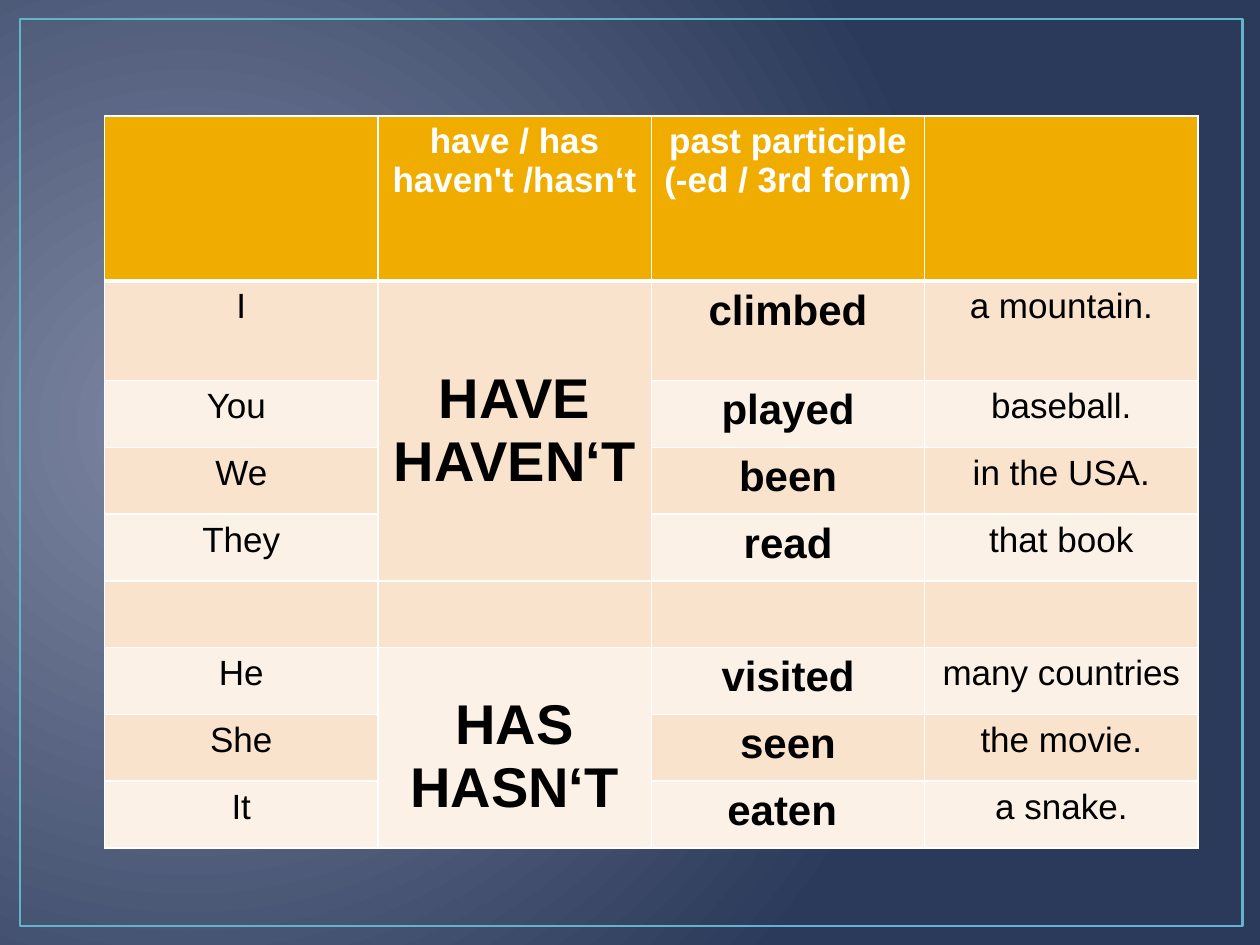
import pptx
import pptx.dml.color
import pptx.enum.shapes
import pptx.enum.text
import pptx.oxml
import pptx.oxml.ns
import pptx.util
from pptx.dml.color import RGBColor
from pptx.util import Inches

WHITE = RGBColor(0xFF, 0xFF, 0xFF)
BLACK = RGBColor(0x00, 0x00, 0x00)
GOLD = RGBColor(0xF0, 0xAD, 0x00)
PEACH = RGBColor(0xF9, 0xE3, 0xCC)
CREAM = RGBColor(0xFC, 0xF1, 0xE7)
TEAL = RGBColor(0x60, 0xB5, 0xCC)
GLOW = RGBColor(0x7E, 0x88, 0xA3)
NAVY = RGBColor(0x2B, 0x39, 0x5A)

HEADER = ["", "have / has\nhaven't /hasn‘t", "past participle\n(-ed / 3rd form)", ""]
# subject, participle, rest of the sentence
SENTENCES = [
    ("I", "climbed", "a mountain."),
    ("You ", "played", "baseball."),
    ("We", "been", "in the USA."),
    ("They", "read", "that book"),
    ("", "", ""),
    ("He", "visited", "many countries"),
    ("She", "seen", "the movie."),
    ("It", "eaten ", "a snake."),
]
# first row, last row, text, top margin
AUXILIARIES = [
    (1, 4, "HAVE\nHAVEN‘T", 0.69),
    (6, 8, "HAS\nHASN‘T", 0.37),
]
COLUMN_WIDTH = 2.17
ROW_HEIGHTS = [1.31, 0.79] + [0.53] * 7


def write(cell, text, size=20, bold=False, color=BLACK):
    cell.text = text
    for paragraph in cell.text_frame.paragraphs:
        paragraph.alignment = pptx.enum.text.PP_ALIGN.CENTER
        for run in paragraph.runs:
            run.font.name = "Arial"
            run.font.size = pptx.util.Pt(size)
            run.font.bold = bold
            run.font.color.rgb = color


def style_cell(cell, fill, top=1, bottom=1):
    """Give a cell white borders (widths in points) and a fill."""
    properties = cell._tc.get_or_add_tcPr()
    for side, width in (("L", 1), ("R", 1), ("T", top), ("B", bottom)):
        properties.append(pptx.oxml.parse_xml(
            f'<a:ln{side} {pptx.oxml.ns.nsdecls("a")} w="{pptx.util.Pt(width)}">'
            f'<a:solidFill><a:srgbClr val="{WHITE}"/></a:solidFill></a:ln{side}>'))
    cell.fill.solid()
    cell.fill.fore_color.rgb = fill


def add_background(slide):
    fill = slide.background.fill
    fill.gradient()
    for stop, color in zip(fill.gradient_stops, (GLOW, NAVY)):
        stop.color.rgb = color
    gradient = slide.background._cSld.find(".//" + pptx.oxml.ns.qn("a:gradFill"))
    linear = gradient.find(pptx.oxml.ns.qn("a:lin"))
    gradient.replace(linear, pptx.oxml.parse_xml(
        f'<a:path {pptx.oxml.ns.nsdecls("a")} path="circle">'
        '<a:fillToRect l="15000" t="50000" r="85000" b="60000"/></a:path>'))


def add_frame(slide):
    frame = slide.shapes.add_shape(
        pptx.enum.shapes.MSO_SHAPE.RECTANGLE,
        Inches(0.16), Inches(0.15), Inches(9.7), Inches(7.2))
    frame.shadow.inherit = False
    frame.fill.background()
    frame.line.color.rgb = TEAL
    frame.line.width = pptx.util.Pt(1.5)


def add_grammar_table(slide):
    table = slide.shapes.add_table(
        len(ROW_HEIGHTS), len(HEADER), Inches(0.83), Inches(0.92),
        Inches(COLUMN_WIDTH * len(HEADER)), Inches(sum(ROW_HEIGHTS))).table
    table.first_row = table.horz_banding = False
    for column in table.columns:
        column.width = Inches(COLUMN_WIDTH)
    for index, (row, height) in enumerate(zip(table.rows, ROW_HEIGHTS)):
        row.height = Inches(height)
        fill = GOLD if index == 0 else PEACH if index % 2 else CREAM
        for cell in row.cells:
            style_cell(cell, fill, top=3 if index == 1 else 1,
                       bottom=3 if index == 0 else 1)

    for column, text in enumerate(HEADER):
        write(table.cell(0, column), text, bold=True, color=WHITE)
    for row, (subject, participle, ending) in enumerate(SENTENCES, start=1):
        write(table.cell(row, 0), subject)
        write(table.cell(row, 2), participle, size=24, bold=True)
        write(table.cell(row, 3), ending)
    for first, last, text, margin in AUXILIARIES:
        cell = table.cell(first, 1)
        cell.merge(table.cell(last, 1))
        cell.margin_top = Inches(margin)
        write(cell, text, size=32, bold=True)


def main():
    presentation = pptx.Presentation()
    presentation.slide_width = Inches(10)
    presentation.slide_height = Inches(7.5)
    slide = presentation.slides.add_slide(presentation.slide_layouts[6])
    add_background(slide)
    add_frame(slide)
    add_grammar_table(slide)
    presentation.save("out.pptx")


if __name__ == "__main__":
    main()
